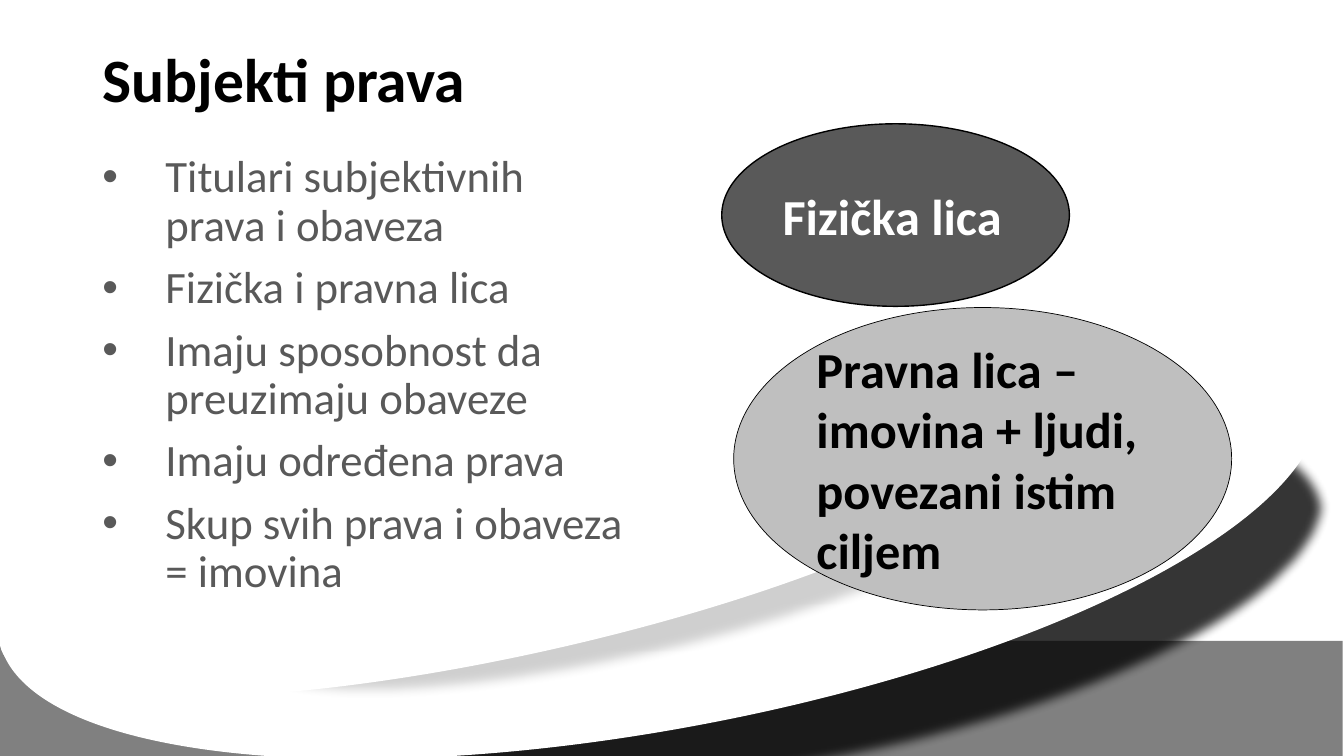
from lxml.etree import SubElement as Sub
from pptx import Presentation
from pptx.dml.color import RGBColor
from pptx.enum.shapes import MSO_SHAPE as Kind
from pptx.enum.text import MSO_ANCHOR as Anchor, PP_ALIGN as Align
from pptx.oxml.ns import qn
from pptx.util import Cm, Pt

deck = Presentation()
deck.slide_width, deck.slide_height = Cm(33.87), Cm(19.05)
slide = deck.slides.add_slide(deck.slide_layouts[6])


def form(kind, box, fill, line=None, turn=0):
    item = slide.shapes.add_shape(kind, *map(Cm, box))
    item.shadow.inherit = False
    item.rotation = turn
    item.fill.solid()
    item.fill.fore_color.rgb = RGBColor.from_string(fill)
    if line:
        item.line.color.rgb = RGBColor.from_string("000000")
        item.line.width = Pt(line)
    else:
        item.line.fill.background()
    return item


def write(item, *lines, size, color, bold=False, space=1, gap=0,
          mark=None, anchor=Anchor.MIDDLE):
    frame = item.text_frame
    frame.word_wrap = True
    frame.vertical_anchor = anchor
    for i, line in enumerate(lines):
        para = frame.add_paragraph() if i else frame.paragraphs[0]
        para.text = line
        para.alignment = Align.LEFT
        para.line_spacing = space
        para.space_before = Pt(gap if i else 0)
        if mark:
            props = para._p.get_or_add_pPr()
            props.set("marL", str(Cm(1.59)))
            props.set("indent", str(-Cm(1.59)))
            Sub(props, qn("a:buFont"), typeface="Arial")
            Sub(props, qn("a:buChar"), char=mark)
        font = para.font
        font.name, font.size, font.bold = "Calibri", Pt(size), bold
        font.color.rgb = RGBColor.from_string(color)


# Grey floor
form(Kind.RECTANGLE, (-0.03, 16.15, 33.87, 3.07), "808080")

# White sweeps, each over a smaller soft dark ellipse
sweeps = [
    # centre x, y, width, height, turn, shade shift x, y, opacity
    (16.61, 13.02, 33.83, 10.69, -10.6, 3.6, 2.0, 79),
    (13.25, 13.3, 27.15, 6.27, -12.7, 2.8, 0.76, 19),
]
for x, y, w, h, turn, dx, dy, alpha in sweeps:
    sw, sh = 0.79 * w + 0.4, 0.79 * h + 0.4
    shade = form(Kind.OVAL, (x + dx - sw / 2, y + dy - sh / 2, sw, sh),
                 "000000", turn=turn)
    props = shade._element.spPr
    tint = props.find(qn("a:solidFill"))[0]
    Sub(tint, qn("a:alpha"), val=str(alpha * 1000))
    Sub(props.find(qn("a:effectLst")), qn("a:softEdge"), rad=str(Pt(8)))
    form(Kind.OVAL, (x - w / 2, y - h / 2, w, h), "FFFFFF", turn=turn)

# Title
title = slide.shapes.add_textbox(Cm(2.33), Cm(1.02), Cm(29.2), Cm(2.1))
write(title, "Subjekti prava", size=44, color="000000", bold=True, space=0.9)

# Bullet list
body = slide.shapes.add_textbox(Cm(2.33), Cm(3.76), Cm(13.72), Cm(14))
write(body,
      "Titulari subjektivnih prava i obaveza",
      "Fizička i pravna lica",
      "Imaju sposobnost da preuzimaju obaveze",
      "Imaju određena prava",
      "Skup svih prava i obaveza = imovina",
      size=32, color="595959", space=0.9, gap=10, mark="•",
      anchor=Anchor.TOP)

# Ovals for the two kinds of subject
people = form(Kind.OVAL, (18.19, 3.12, 8.76, 4.6), "595959", line=1)
write(people, "Fizička lica", size=36, color="FFFFFF", bold=True)
firms = form(Kind.OVAL, (18.49, 7.75, 12.55, 7.62), "BFBFBF", line=0.5)
write(firms, "Pravna lica – imovina + ljudi, povezani istim ciljem",
      size=36, color="000000", bold=True)

deck.save("out.pptx")
